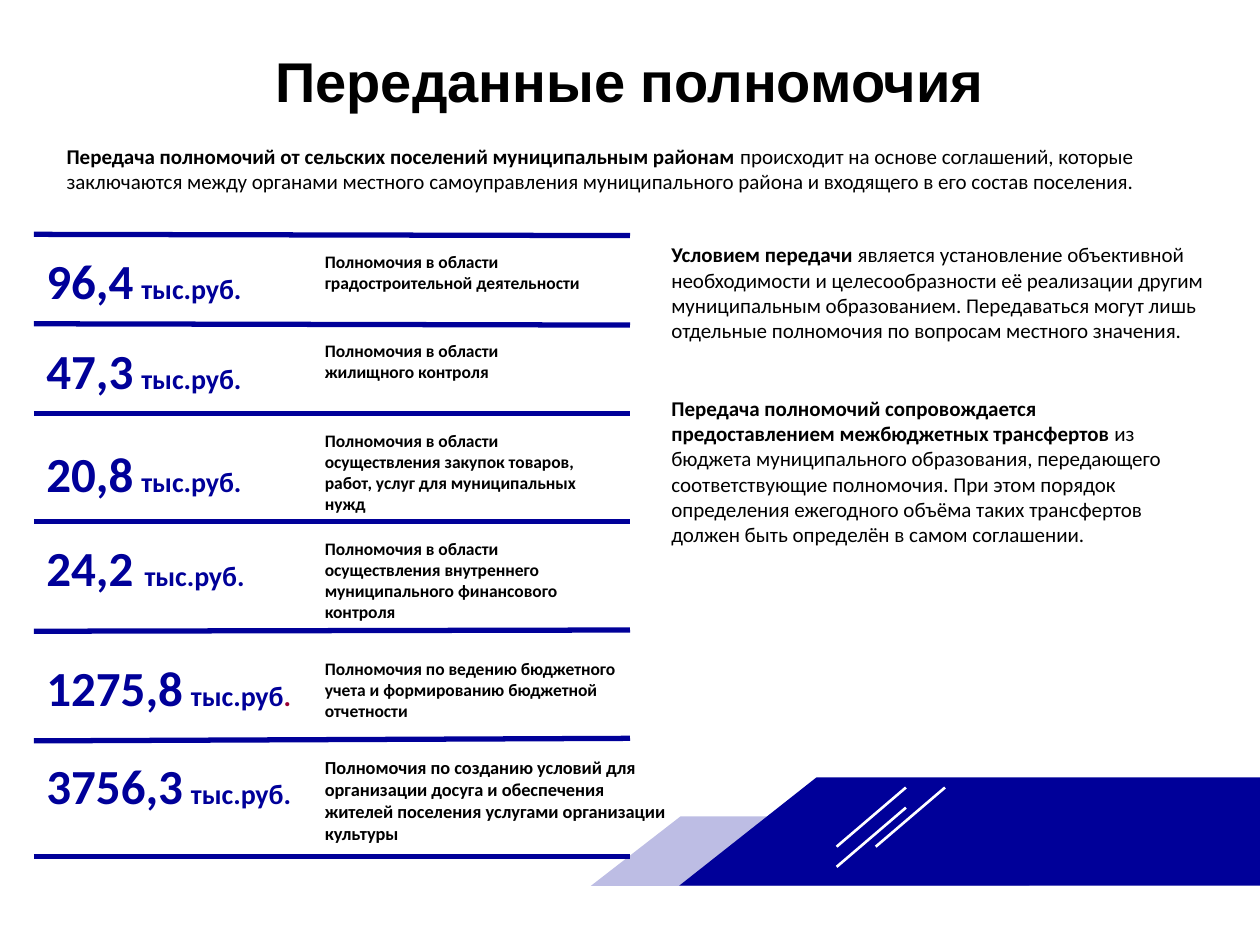
"""Builds the slide on delegated municipal powers."""
from typing import NamedTuple

from lxml import etree
from pptx import Presentation
from pptx import util as u
from pptx.dml.color import RGBColor
from pptx.enum import shapes, text
from pptx.oxml import ns

PX = 9144
COLORS = {"navy": "000099", "black": "000000", "white": "FFFFFF", "wine": "990033"}
LEFT, RULE_END, LABEL_LEFT = 27, 500, 248


class Run(NamedTuple):
    words: str
    size: float
    bold: bool = True
    color: str = "black"
    font: str = "Calibri"


class Box(NamedTuple):
    left: int
    top: int
    width: int
    height: int


class Passage(NamedTuple):
    box: Box
    lead: str
    rest: str


class Power(NamedTuple):
    amount: str
    purpose: str
    top: int
    label_width: int
    label_height: int
    amount_width: int = 205
    amount_drop: int = 0
    label_size: float = 10
    gap_size: float = 20
    dot_color: str = "navy"


class Line(NamedTuple):
    x1: int
    y1: int
    x2: int
    y2: int


PASSAGES = [
    Passage(Box(43, 109, 914, 50),
            "Передача полномочий от сельских поселений муниципальным районам",
            " происходит на основе соглашений, которые заключаются между органами местного "
            "самоуправления муниципального района и входящего в его состав поселения."),
    Passage(Box(523, 187, 449, 91),
            "Условием передачи",
            " является установление объективной необходимости и целесообразности её реализации "
            "другим муниципальным образованием. Передаваться могут лишь отдельные полномочия "
            "по вопросам местного значения."),
    Passage(Box(523, 309, 410, 131),
            "Передача полномочий сопровождается предоставлением межбюджетных трансфертов",
            " из бюджета муниципального образования, передающего соответствующие полномочия. "
            "При этом порядок определения ежегодного объёма таких трансфертов должен быть "
            "определён в самом соглашении."),
]

POWERS = [
    Power("96,4", "Полномочия в области градостроительной деятельности", 194, 223, 61),
    Power("47,3", "Полномочия в области жилищного контроля", 265, 180, 44),
    Power("20,8", "Полномочия в области осуществления закупок товаров, работ, услуг "
          "для муниципальных нужд", 336, 236, 77, amount_drop=11),
    Power("24,2", "Полномочия в области осуществления внутреннего муниципального "
          "финансового контроля", 422, 244, 77, gap_size=28),
    Power("1275,8", "Полномочия по ведению бюджетного учета и формированию бюджетной "
          "отчетности", 517, 252, 61, amount_width=236, dot_color="wine"),
    Power("3756,3", "Полномочия по созданию условий для организации досуга и обеспечения "
          "жителей поселения услугами организации культуры", 595, 291, 81,
          amount_width=268, label_size=10.5),
]

RULES = [Line(LEFT, start, RULE_END, end) for start, end in (
    (186, 187), (257, 258), (328, 328), (414, 414), (501, 500), (588, 586), (680, 680))]
STROKES = [Line(x, y, x + 55, y - 47) for x, y in ((664, 672), (664, 688), (695, 672))]


def rgb(name: str) -> RGBColor:
    """Look up a named colour."""
    return RGBColor.from_string(COLORS[name])


def add_text(slide, box: Box, runs: list[Run], align=text.PP_ALIGN.LEFT,
             anchor=text.MSO_ANCHOR.TOP) -> None:
    """Add a wrapped one-paragraph text box."""
    frame = slide.shapes.add_textbox(*(side * PX for side in box)).text_frame
    frame.word_wrap = True
    frame.vertical_anchor = anchor
    paragraph = frame.paragraphs[0]
    paragraph.alignment = align
    for item in runs:
        run = paragraph.add_run()
        run.text = item.words
        run.font.size = u.Pt(item.size)
        run.font.bold = item.bold
        run.font.name = item.font
        run.font.color.rgb = rgb(item.color)


def add_line(slide, line: Line, color: str, weight: float) -> None:
    """Add a straight line without a shadow."""
    connector = slide.shapes.add_connector(
        shapes.MSO_CONNECTOR.STRAIGHT, *(point * PX for point in line))
    connector.line.color.rgb = rgb(color)
    connector.line.width = u.Pt(weight)
    etree.SubElement(connector.element.spPr, ns.qn("a:effectLst"))


def add_band(slide, corners: list[tuple[int, int]], opacity: int = 100) -> None:
    """Add a navy polygon with the given percentage of opacity."""
    builder = slide.shapes.build_freeform(*corners[0], scale=PX)
    builder.add_line_segments(corners[1:], close=True)
    band = builder.convert_to_shape()
    band.shadow.inherit = False
    band.line.fill.background()
    band.fill.solid()
    band.fill.fore_color.rgb = rgb("navy")
    if opacity < 100:
        tint = band.element.spPr.find(".//" + ns.qn("a:srgbClr"))
        etree.SubElement(tint, ns.qn("a:alpha"), val=str(opacity * 1000))


def add_power(slide, power: Power) -> None:
    """Add the amount and purpose of one delegated power."""
    add_text(slide, Box(LABEL_LEFT, power.top, power.label_width, power.label_height),
             [Run(power.purpose, power.label_size)])
    add_text(slide, Box(LEFT, power.top + power.amount_drop, power.amount_width, 55),
             [Run(power.amount, 28, color="navy"), Run(" ", power.gap_size, color="navy"),
              Run("тыс.руб", 16, color="navy"), Run(".", 16, color=power.dot_color)])


def main() -> None:
    """Build and save the slide."""
    deck = Presentation()
    deck.slide_width, deck.slide_height = 1000 * PX, 750 * PX
    slide = deck.slides.add_slide(deck.slide_layouts[6])
    add_text(slide, Box(50, 25, 900, 77), [Run("Переданные полномочия", 32, font="Arial")],
             text.PP_ALIGN.CENTER, text.MSO_ANCHOR.MIDDLE)
    for passage in PASSAGES:
        add_text(slide, passage.box, [Run(passage.lead, 12), Run(passage.rest, 12, bold=False)])
    for power in POWERS:
        add_power(slide, power)
    for rule in RULES:
        add_line(slide, rule, "navy", 3)
    add_band(slide, [(648, 617), (1000, 617), (1000, 703), (539, 703)])
    add_band(slide, [(540, 648), (817, 648), (817, 703), (469, 703)], opacity=26)
    for stroke in STROKES:
        add_line(slide, stroke, "white", 1.5)
    deck.save("out.pptx")


if __name__ == "__main__":
    main()
